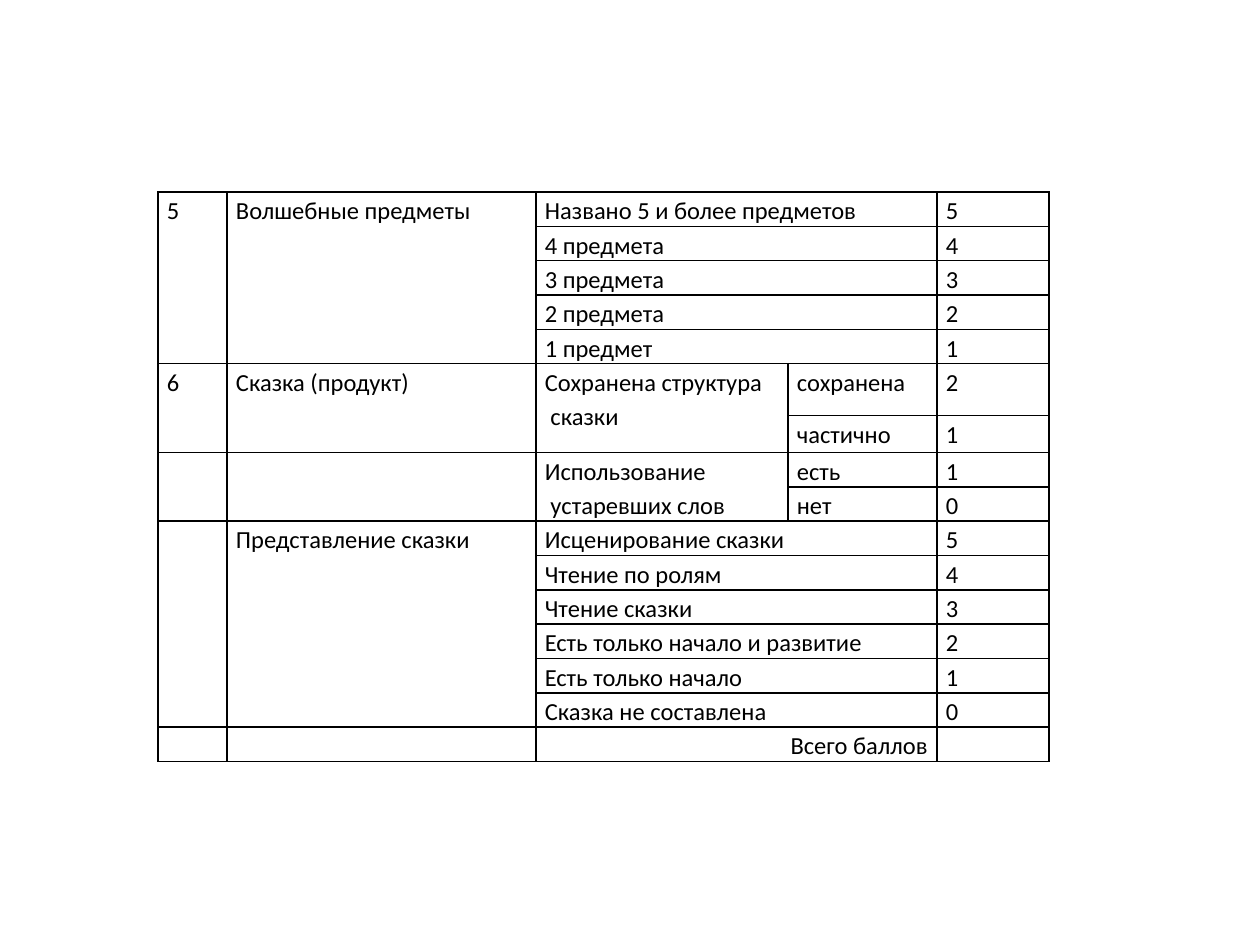
from lxml.etree import SubElement
from pptx import Presentation
from pptx.dml.color import RGBColor
from pptx.enum.text import PP_ALIGN
from pptx.oxml.ns import qn
from pptx.util import Emu, Pt

PIXEL = 914400 // 126
INK = "000000"
FONT_SIZE = 14
COLUMN_WIDTHS = [69, 309, 252, 149, 112]
ROW_HEIGHTS = [34] * 5 + [52, 37] + [34] * 9

SECTIONS = [
    (0, 5, "5", "Волшебные предметы"),
    (5, 2, "6", "Сказка (продукт)"),
    (7, 2, "", ""),
    (9, 6, "", "Представление сказки"),
]
SPLIT_CRITERIA = {
    5: "Сохранена структура\n сказки",
    7: "Использование\n устаревших слов",
}
LEVELS = [
    ("Названо 5 и более предметов", "5"),
    ("4 предмета", "4"),
    ("3 предмета", "3"),
    ("2 предмета", "2"),
    ("1 предмет", "1"),
    ("сохранена", "2"),
    ("частично", "1"),
    ("есть", "1"),
    ("нет", "0"),
    ("Исценирование сказки", "5"),
    ("Чтение по ролям", "4"),
    ("Чтение сказки", "3"),
    ("Есть только начало и развитие", "2"),
    ("Есть только начало", "1"),
    ("Сказка не составлена", "0"),
    ("Всего баллов", ""),
]


def px(length):
    """Convert pixels to EMU."""
    return Emu(length * PIXEL)


def color(value):
    """Convert a hex string to a colour."""
    return RGBColor.from_string(value)


def add_borders(cell):
    """Draw a one-point line on every side of a cell."""
    properties = cell._tc.get_or_add_tcPr()
    for side in ("a:lnL", "a:lnR", "a:lnT", "a:lnB"):
        line = SubElement(properties, qn(side), w=str(Pt(1)))
        fill = SubElement(line, qn("a:solidFill"))
        SubElement(fill, qn("a:srgbClr"), val=INK)


def format_cell(cell):
    """Set margins, borders, fill and the size of empty text."""
    cell.margin_left = cell.margin_right = px(9)
    cell.margin_top = cell.margin_bottom = px(0)
    add_borders(cell)
    cell.fill.background()
    paragraph = cell.text_frame.paragraphs[0]
    SubElement(paragraph._p, qn("a:endParaRPr"), sz=str(FONT_SIZE * 100))


def write_cell(cell, text, alignment=PP_ALIGN.LEFT):
    """Write each line of text as a paragraph."""
    frame = cell.text_frame
    for index, line in enumerate(text.split("\n") if text else []):
        paragraph = frame.add_paragraph() if index else frame.paragraphs[0]
        paragraph.alignment = alignment
        paragraph.line_spacing = 1.15
        run = paragraph.add_run()
        run.text = line
        run.font.name = "Calibri"
        run.font.size = Pt(FONT_SIZE)
        run.font.color.rgb = color(INK)


def merge_down(table, row, column, count):
    """Merge cells downwards and return the first one."""
    cell = table.cell(row, column)
    cell.merge(table.cell(row + count - 1, column))
    return cell


def add_score_table(slide):
    """Add the empty grid of the score table."""
    frame = slide.shapes.add_table(
        len(ROW_HEIGHTS), len(COLUMN_WIDTHS), px(158), px(192),
        px(sum(COLUMN_WIDTHS)), px(sum(ROW_HEIGHTS)))
    table = frame.table
    table.first_row = table.horz_banding = False
    for column, width in zip(table.columns, COLUMN_WIDTHS):
        column.width = px(width)
    for row, height in zip(table.rows, ROW_HEIGHTS):
        row.height = px(height)
    for cell in table.iter_cells():
        format_cell(cell)
    return table


def fill_sections(table):
    """Write the section numbers, names and split criteria."""
    for row, count, number, name in SECTIONS:
        for column, text in enumerate((number, name)):
            write_cell(merge_down(table, row, column, count), text)
    for row, text in SPLIT_CRITERIA.items():
        write_cell(merge_down(table, row, 2, 2), text)


def fill_levels(table):
    """Write the levels and their points."""
    split_rows = {row + step for row in SPLIT_CRITERIA for step in (0, 1)}
    for row, (level, points) in enumerate(LEVELS):
        cell = table.cell(row, 3 if row in split_rows else 2)
        if row not in split_rows:
            cell.merge(table.cell(row, 3))
        is_total = row == len(LEVELS) - 1
        write_cell(cell, level, PP_ALIGN.RIGHT if is_total else PP_ALIGN.LEFT)
        write_cell(table.cell(row, 4), points)


def main():
    """Build the slide and save it."""
    presentation = Presentation()
    presentation.slide_width = px(1260)
    presentation.slide_height = px(945)
    slide = presentation.slides.add_slide(presentation.slide_layouts[6])
    table = add_score_table(slide)
    fill_sections(table)
    fill_levels(table)
    presentation.save("out.pptx")


if __name__ == "__main__":
    main()
